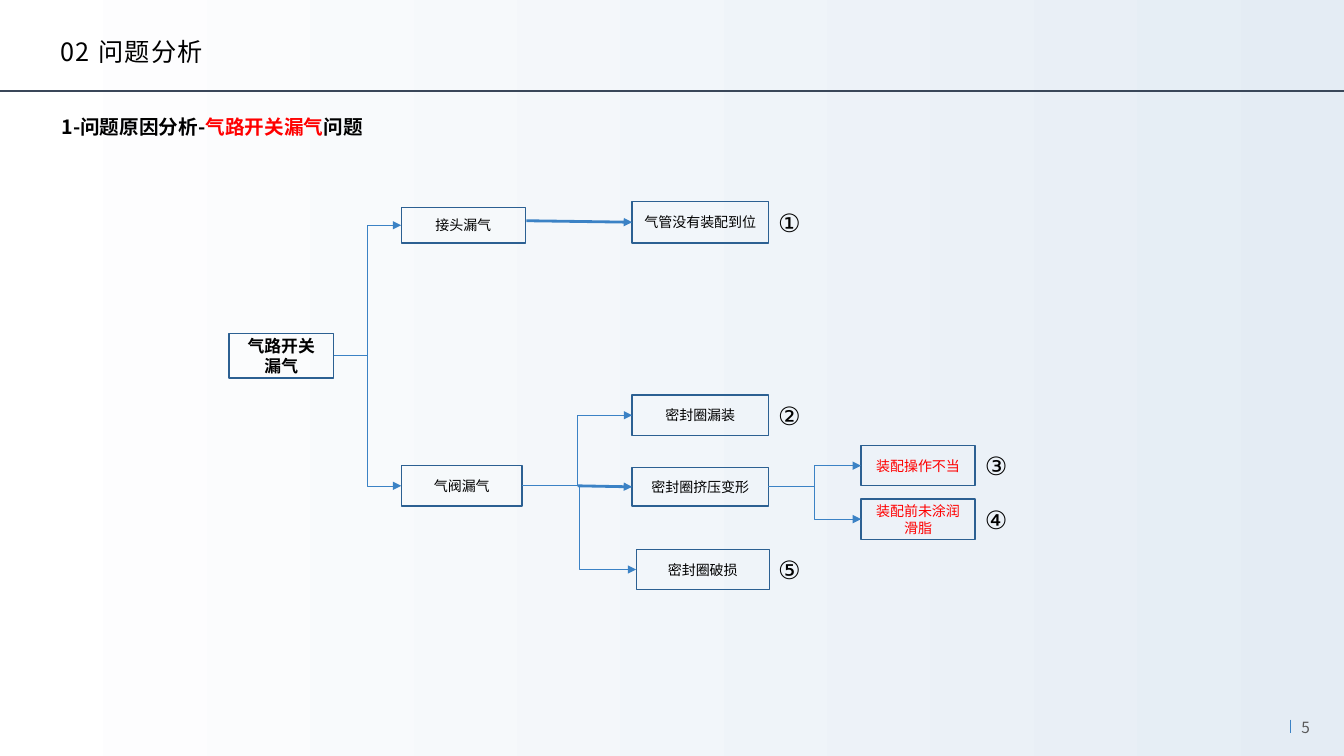
from lxml import etree
from pptx import Presentation
from pptx.dml.color import RGBColor
from pptx.enum.shapes import MSO_CONNECTOR as CXN, MSO_SHAPE
from pptx.enum.text import MSO_ANCHOR as ANCHOR, PP_ALIGN as ALIGN
from pptx.oxml.ns import qn
from pptx.util import Inches, Pt

COLORS = {
    "white": "FFFFFF", "pale": "E4ECF4", "rule": "3A4759", "blue": "3B82C5",
    "border": "2C6092", "black": "000000", "red": "FF0000", "gray": "595959",
}
JP, SC = "Noto Sans CJK JP", "Noto Sans CJK SC"
RIGHT, LEFT = 3, 1


def add_run(p, text, size, font, color="black", bold=False):
    r = p.add_run()
    r.text = text
    r.font.size = Pt(size)
    r.font.name = font
    r.font.bold = bold
    r.font.color.rgb = RGBColor.from_string(COLORS[color])
    etree.SubElement(r.font._element, qn("a:ea"), typeface=font)
    return r


def add_line(kind, start, end, color, width, arrow=False):
    s = slide.shapes.add_connector(kind, *map(Inches, start + end))
    s.line.color.rgb = RGBColor.from_string(COLORS[color])
    s.line.width = Pt(width)
    if arrow:
        etree.SubElement(s.line._get_or_add_ln(), qn("a:tailEnd"), type="triangle")
    etree.SubElement(s._element.spPr, qn("a:effectLst"))
    return s


prs = Presentation()
prs.slide_width, prs.slide_height = Inches(13.33), Inches(7.5)
slide = prs.slides.add_slide(prs.slide_layouts[6])

backdrop = slide.shapes.add_shape(MSO_SHAPE.RECTANGLE, 0, 0, prs.slide_width, prs.slide_height)
backdrop.shadow.inherit = False
backdrop.line.fill.background()
backdrop.fill.gradient()
backdrop.fill.gradient_angle = 0
for stop, color in zip(backdrop.fill.gradient_stops, ("white", "pale")):
    stop.color.rgb = RGBColor.from_string(COLORS[color])

add_line(CXN.STRAIGHT, (0, 0.9), (13.33, 0.9), "rule", 1.5)
add_line(CXN.STRAIGHT, (12.8, 7.14), (12.8, 7.27), "blue", 1)

page = slide.shapes.add_textbox(Inches(12.81), Inches(7.07), Inches(0.5), Inches(0.25))
add_run(page.text_frame.paragraphs[0], "5", 11, SC, "gray")

title = slide.shapes.add_textbox(Inches(0.6), Inches(0.29), Inches(10.65), Inches(0.47))
subtitle = slide.shapes.add_textbox(Inches(0.61), Inches(1.02), Inches(12.11), Inches(0.46))
for sp in (title, subtitle):
    tf = sp.text_frame
    tf.word_wrap = True
    tf.margin_left = tf.margin_right = tf.margin_top = tf.margin_bottom = 0

title.text_frame.vertical_anchor = ANCHOR.MIDDLE
p = title.text_frame.paragraphs[0]
p.line_spacing = 0.9
r = add_run(p, "02 问题分析", 18, JP)
r.font._element.set("spc", "100")

p = subtitle.text_frame.paragraphs[0]
p.line_spacing = 1.5
for text, color in (("1-问题原因分析-", "black"), ("气路开关漏气", "red"), ("问题", "black")):
    add_run(p, text, 14, JP, color, True)

causes = {
    "leak": (2.27, 3.31, 1.04, 0.44, ["气路开关", "漏气"], 12, "black"),
    "joint": (3.98, 2.06, 1.23, 0.35, ["接头漏气"], 10, "black"),
    "valve": (3.98, 4.62, 1.2, 0.4, ["气阀漏气"], 10, "black"),
    "tube": (6.27, 2, 1.35, 0.41, ["气管没有装配到位"], 10, "black"),
    "missing": (6.27, 3.92, 1.35, 0.4, ["密封圈漏装"], 10, "black"),
    "squeezed": (6.27, 4.64, 1.35, 0.38, ["密封圈挤压变形"], 10, "black"),
    "broken": (6.31, 5.45, 1.32, 0.4, ["密封圈破损"], 10, "black"),
    "handling": (8.54, 4.42, 1.13, 0.4, ["装配操作不当"], 10, "red"),
    "grease": (8.54, 4.95, 1.13, 0.4, ["装配前未涂润滑脂"], 10, "red"),
}
boxes = {}
for name, (x, y, w, h, lines, size, color) in causes.items():
    s = slide.shapes.add_shape(MSO_SHAPE.RECTANGLE, *map(Inches, (x, y, w, h)))
    s.shadow.inherit = False
    s.fill.background()
    s.line.color.rgb = RGBColor.from_string(COLORS["border"])
    s.line.width = Pt(1)
    tf = s.text_frame
    tf.word_wrap = True
    tf.vertical_anchor = ANCHOR.MIDDLE
    for i, text in enumerate(lines):
        p = tf.add_paragraph() if i else tf.paragraphs[0]
        p.alignment = ALIGN.CENTER
        add_run(p, text, size, SC, color, name == "leak")
    boxes[name] = s

branches = [
    ("leak", "joint"), ("leak", "valve"),
    ("valve", "missing"), ("valve", "broken"),
    ("squeezed", "handling"), ("squeezed", "grease"),
]
for cause, effect in branches:
    s = add_line(CXN.ELBOW, (0, 0), (1, 1), "blue", 0.5, True)
    s.begin_connect(boxes[cause], RIGHT)
    s.end_connect(boxes[effect], LEFT)

for start, end, target in (
    ((5.22, 2.19), (6.27, 2.19), "tube"),
    ((5.73, 4.82), (6.27, 4.83), "squeezed"),
):
    s = add_line(CXN.STRAIGHT, start, end, "blue", 0, True)
    s.end_connect(boxes[target], LEFT)

for mark, x, y in (("①", 7.62, 2.01), ("②", 7.62, 3.92), ("③", 9.67, 4.42),
                   ("④", 9.67, 4.95), ("⑤", 7.62, 5.45)):
    sp = slide.shapes.add_textbox(Inches(x), Inches(y), Inches(0.59), Inches(0.4))
    sp.text_frame.word_wrap = True
    add_run(sp.text_frame.paragraphs[0], mark, 18, "Arial")

prs.save("out.pptx")
